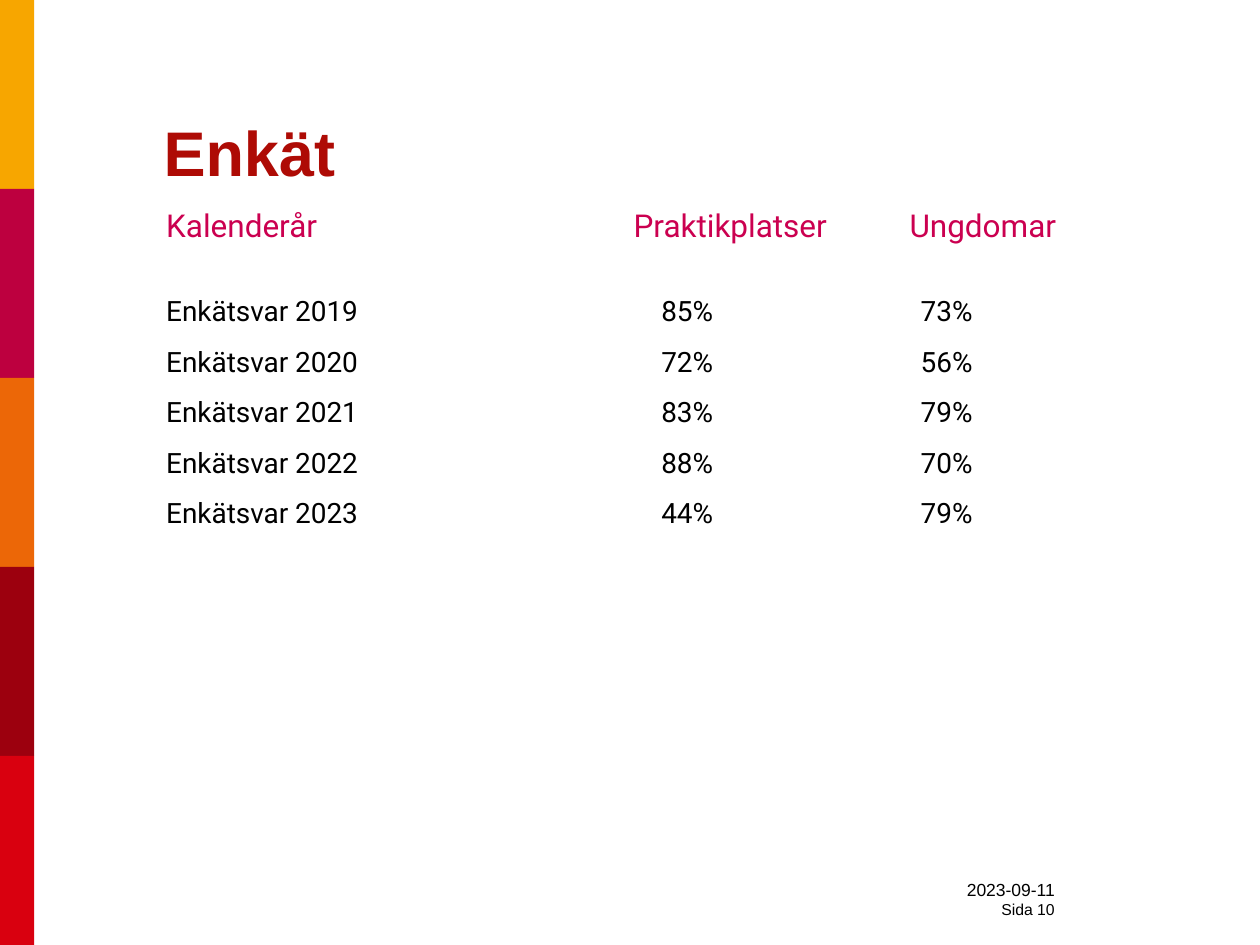
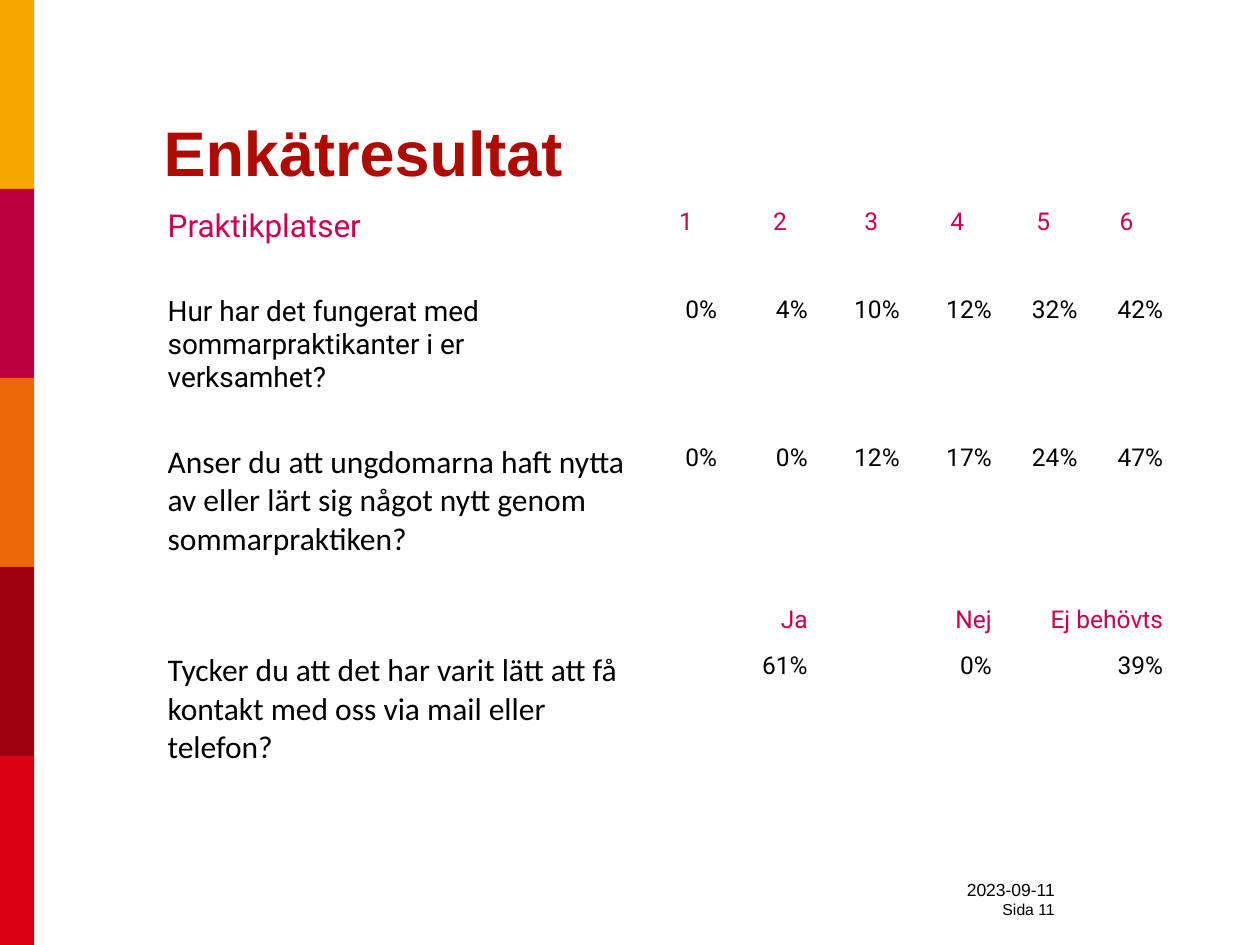
from collections import namedtuple

from pptx import Presentation
from pptx.dml.color import RGBColor
from pptx.enum.shapes import MSO_SHAPE
from pptx.enum.text import MSO_ANCHOR, PP_ALIGN
from pptx.util import Pt

RECTANGLE = MSO_SHAPE.RECTANGLE
MIDDLE, BOTTOM = MSO_ANCHOR.MIDDLE, MSO_ANCHOR.BOTTOM
LEFT, CENTER, RIGHT = PP_ALIGN.LEFT, PP_ALIGN.CENTER, PP_ALIGN.RIGHT

# Shared look
SLIDE_WIDTH, SLIDE_HEIGHT = 720, 540
BAND_COLORS = ["F7A600", "BD003F", "EC6707", "9C000E", "D9000F"]
BAND_WIDTH = 19.5
TABLE_TOP = 118.8
HEADING_HEIGHT = 50.4
DATE = "2023-09-11"

Style = namedtuple("Style", "font size color bold", defaults=[False])
TITLE = Style("Arial", 36, "AE0B05", True)
FOOTER_DATE = Style("Arial", 10, "000000")
FOOTER_PAGE = Style("Arial", 9, "000000")
HEADING = Style("Roboto", 18, "CB0050")
SCALE = Style("Roboto", 14, "CB0050")
BODY = Style("Roboto", 16, "000000")
VALUE = Style("Roboto", 14, "000000")
QUESTION = Style("Calibri", 18, "000000")


def rgb(color):
    return RGBColor.from_string(color)


def format_paragraph(paragraph, style, align=LEFT):
    paragraph.alignment = align
    for run in paragraph.runs:
        run.font.name = style.font
        run.font.size = Pt(style.size)
        run.font.bold = style.bold
        run.font.color.rgb = rgb(style.color)


def add_text(slide, left, top, width, height, lines, anchor, align=LEFT):
    """Add a text box; lines holds (text, style) pairs."""
    frame = slide.shapes.add_textbox(Pt(left), Pt(top), Pt(width), Pt(height)).text_frame
    frame.word_wrap = True
    frame.vertical_anchor = anchor
    frame.text = "\n".join(text for text, _ in lines)
    for paragraph, (_, style) in zip(frame.paragraphs, lines):
        format_paragraph(paragraph, style, align)
    return frame


def add_bands(slide):
    height = SLIDE_HEIGHT / len(BAND_COLORS)
    for i, color in enumerate(BAND_COLORS):
        band = slide.shapes.add_shape(RECTANGLE, 0, Pt(i * height), Pt(BAND_WIDTH), Pt(height))
        band.shadow.inherit = False
        band.fill.solid()
        band.fill.fore_color.rgb = rgb(color)
        band.line.fill.background()


def add_page(prs, title, number):
    """Add a slide with bands, footer and title."""
    slide = prs.slides.add_slide(prs.slide_layouts[6])
    footer = add_text(slide, 527.8, 500.4, 74.9, 26.6,
                      [(DATE, FOOTER_DATE), (f"Sida {number}", FOOTER_PAGE)], MIDDLE, RIGHT)
    footer.margin_left = footer.margin_right = 0
    add_bands(slide)
    add_text(slide, 86.4, 21.6, 622.8, 90, [(title, TITLE)], BOTTOM)
    return slide


def add_plain_table(slide, left, widths, heights):
    """Add a table without fills, banding or cell margins."""
    table = slide.shapes.add_table(len(heights), len(widths), Pt(left), Pt(TABLE_TOP),
                                   Pt(sum(widths)), Pt(sum(heights))).table
    table.first_row = table.horz_banding = False
    for column, width in zip(table.columns, widths):
        column.width = Pt(width)
    for row, height in zip(table.rows, heights):
        row.height = Pt(height)
    for cell in table.iter_cells():
        cell.fill.background()
        cell.margin_left = cell.margin_right = cell.margin_top = cell.margin_bottom = 0
    return table


def put(table, row, col, text, style, align=LEFT, rows=1, cols=1):
    """Write one cell, spanning the given number of rows and columns."""
    cell = table.cell(row, col)
    if rows > 1 or cols > 1:
        cell.merge(table.cell(row + rows - 1, col + cols - 1))
    cell.text_frame.text = text
    format_paragraph(cell.text_frame.paragraphs[0], style, align)
    return cell


def build_survey(prs):
    answers = [("2019", "85%", "73%"), ("2020", "72%", "56%"), ("2021", "83%", "79%"),
               ("2022", "88%", "70%"), ("2023", "44%", "79%")]
    slide = add_page(prs, "Enkät", 10)
    table = add_plain_table(slide, 95, [267.1, 45.4, 112.3, 36, 67.7],
                            [HEADING_HEIGHT] + [28.8] * len(answers))
    put(table, 0, 0, "Kalenderår", HEADING)
    put(table, 0, 1, "Praktikplatser", HEADING, cols=2)
    put(table, 0, 3, "Ungdomar", HEADING, cols=2)
    for row, (year, workplaces, youths) in enumerate(answers, 1):
        put(table, row, 0, f"Enkätsvar {year}", BODY)
        put(table, row, 1, workplaces, BODY, RIGHT)
        put(table, row, 3, youths, BODY, RIGHT)


def build_results(prs):
    slide = add_page(prs, "Enkätresultat", 11)
    table = add_plain_table(slide, 95.8, [261.4, 52.6, 51.8, 52.6, 52.6, 49, 49],
                            [HEADING_HEIGHT, 56.3, 26.6, 66, 26.6, 26.6, 66])

    # Grades 1 to 6, each nudged right of its column centre
    put(table, 0, 0, "Praktikplatser", HEADING)
    for grade, indent in enumerate([17, 20, 20, 13, 10, 7], 1):
        put(table, 0, grade, str(grade), SCALE, CENTER).margin_left = Pt(indent)

    # Graded questions
    graded = [
        (1, "Hur har det fungerat med sommarpraktikanter i er verksamhet?", BODY,
         ["0%", "4%", "10%", "12%", "32%", "42%"]),
        (3, "Anser du att ungdomarna haft nytta av eller lärt sig något nytt genom "
            "sommarpraktiken?", QUESTION,
         ["0%", "0%", "12%", "17%", "24%", "47%"]),
    ]
    for row, question, style, shares in graded:
        put(table, row, 0, question, style)
        for grade, share in enumerate(shares, 1):
            put(table, row, grade, share, VALUE, RIGHT, rows=2)

    # Yes/no question
    put(table, 6, 0, "Tycker du att det har varit lätt att få kontakt med oss via mail "
                     "eller telefon?", QUESTION)
    options = [("Ja", "61%"), ("Nej", "0%"), ("Ej behövts", "39%")]
    for i, (option, share) in enumerate(options):
        put(table, 5, 2 * i + 1, option, SCALE, RIGHT, cols=2)
        put(table, 6, 2 * i + 2, share, VALUE, RIGHT)


def main():
    prs = Presentation()
    prs.slide_width, prs.slide_height = Pt(SLIDE_WIDTH), Pt(SLIDE_HEIGHT)
    build_survey(prs)
    build_results(prs)
    prs.save("out.pptx")


if __name__ == "__main__":
    main()
